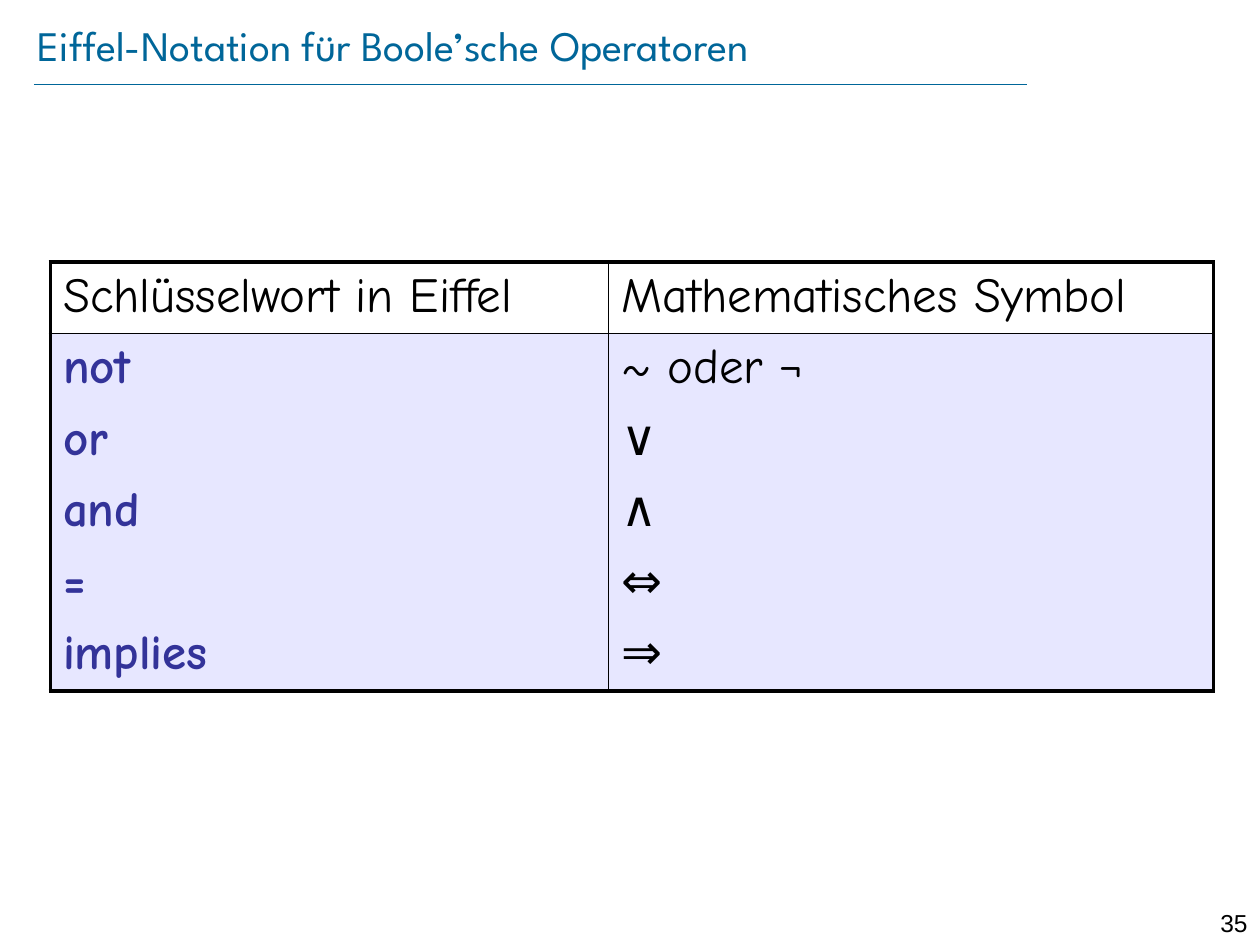
import pptx
import pptx.dml.color
import pptx.enum.shapes
import pptx.enum.text
import pptx.oxml
import pptx.oxml.ns
import pptx.util
from lxml import etree

Inches = pptx.util.Inches
Pt = pptx.util.Pt
COLORS = {"title": "006699", "text": "000000", "keyword": "333399", "body": "E7E7FF"}
ROWS = [
    ("Schlüsselwort in Eiffel", "Mathematisches Symbol"),
    ("not", "~ oder ¬"),
    ("or", "∨"),
    ("and", "∧"),
    ("=", "⇔"),
    ("implies", "⇒"),
]
OUTER, INNER = 2.25, 1


def rgb(name):
    return pptx.dml.color.RGBColor.from_string(COLORS[name])


def format_text(p, font, size, color, bold=False):
    p.font.name = font
    p.font.size = Pt(size)
    p.font.bold = bold
    p.font.color.rgb = rgb(color)


def set_borders(cell, widths):
    tc_pr = cell._tc.get_or_add_tcPr()
    for i, (side, width) in enumerate(zip("LRTB", widths)):
        ln = etree.Element(pptx.oxml.ns.qn(f"a:ln{side}"), w=str(Pt(width)))
        if width:
            fill = etree.SubElement(ln, pptx.oxml.ns.qn("a:solidFill"))
            etree.SubElement(fill, pptx.oxml.ns.qn("a:srgbClr"), val=COLORS["text"])
        else:
            etree.SubElement(ln, pptx.oxml.ns.qn("a:noFill"))
        tc_pr.insert(i, ln)


def add_title(s, x, y, w, h):
    sp = s.shapes.title
    sp.left, sp.top, sp.width, sp.height = x, y, w, h
    tf = sp.text_frame
    tf.margin_left = tf.margin_right = tf.margin_top = tf.margin_bottom = 0
    tf.auto_size = pptx.enum.text.MSO_AUTO_SIZE.NONE
    tf.vertical_anchor = pptx.enum.text.MSO_ANCHOR.MIDDLE
    p = tf.paragraphs[0]
    p.text = "Eiffel-Notation für Boole’sche Operatoren"
    p.alignment = pptx.enum.text.PP_ALIGN.LEFT
    format_text(p, "League Spartan", 24, "title")


def add_rule(s, x, y, w):
    line = s.shapes.add_connector(
        pptx.enum.shapes.MSO_CONNECTOR.STRAIGHT, x, y, x + w, y)
    line.line.color.rgb = rgb("title")
    line.line.width = Pt(0.25)
    etree.SubElement(line._element.spPr, pptx.oxml.ns.qn("a:effectLst"))


def add_operator_table(s, x, y, w, h):
    table = s.shapes.add_table(len(ROWS), 2, x, y, w, h).table
    table.first_row = table.horz_banding = False
    table.columns[0].width = Inches(4.43)
    table.columns[1].width = w - Inches(4.43)
    last = len(ROWS) - 1
    for i, texts in enumerate(ROWS):
        top = OUTER if i == 0 else INNER if i == 1 else 0
        bottom = INNER if i == 0 else OUTER if i == last else 0
        for j, text in enumerate(texts):
            cell = table.cell(i, j)
            if i == 0:
                cell.fill.background()
            else:
                cell.fill.solid()
                cell.fill.fore_color.rgb = rgb("body")
            sides = (OUTER, INNER) if j == 0 else (INNER, OUTER)
            set_borders(cell, (*sides, top, bottom))
            p = cell.text_frame.paragraphs[0]
            p.text = text
            keyword = i > 0 and j == 0
            format_text(p, "Comic Neue", 28, "keyword" if keyword else "text", keyword)


def add_page_number(s, x, y, w, h):
    tf = s.shapes.add_textbox(x, y, w, h).text_frame
    tf.word_wrap = True
    p = tf.paragraphs[0]
    p.text = "35"
    p.alignment = pptx.enum.text.PP_ALIGN.RIGHT
    format_text(p, "Arial", 14, "text")


def main():
    prs = pptx.Presentation()
    prs.slide_width, prs.slide_height = Inches(10), Inches(7.5)
    s = prs.slides.add_slide(prs.slide_layouts[5])
    add_rule(s, Inches(0.27), Inches(0.67), Inches(7.88))
    add_page_number(s, Inches(9.45), Inches(7.16), Inches(0.55), Inches(0.24))
    add_title(s, Inches(0.3), Inches(0.08), Inches(8.91), Inches(0.55))
    add_operator_table(s, Inches(0.4), Inches(2.08), Inches(9.23), Inches(3.3))
    prs.save("out.pptx")


if __name__ == "__main__":
    main()
